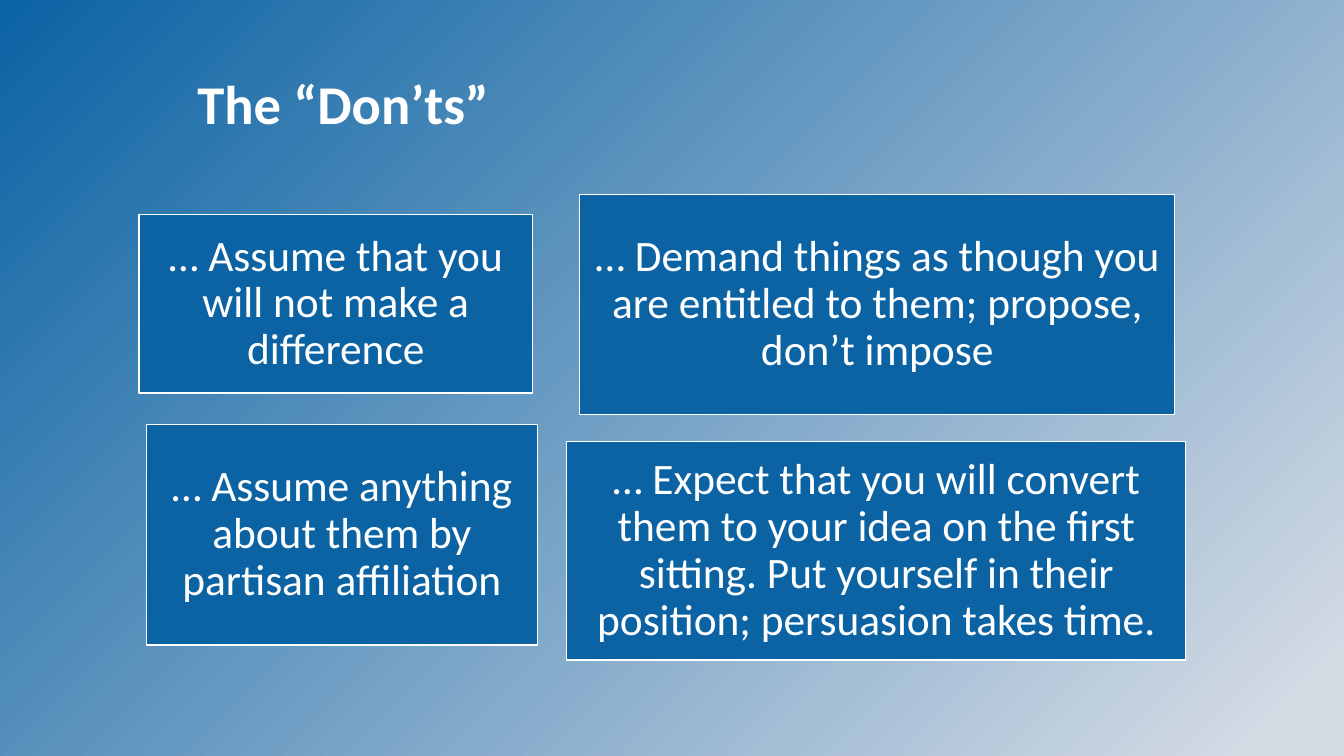
from dataclasses import dataclass

import pptx
import pptx.dml.color
import pptx.enum.shapes
import pptx.enum.text
import pptx.slide
import pptx.text.text
import pptx.util

Inches = pptx.util.Inches
Pt = pptx.util.Pt

BLUE = pptx.dml.color.RGBColor(0x0B, 0x63, 0xA4)
PALE = pptx.dml.color.RGBColor(0xD6, 0xDC, 0xE5)
WHITE = pptx.dml.color.RGBColor(0xFF, 0xFF, 0xFF)
FONT = "Calibri"
CARD_INSET = Inches(0.13)


@dataclass
class Card:
    left: float
    top: float
    width: float
    height: float
    text: str


CARDS = [
    Card(1.38, 2.13, 3.9, 1.77, "… Assume that you will not make a difference"),
    Card(5.75, 1.93, 5.9, 2.18,
         "… Demand things as though you are entitled to them; propose, don’t impose"),
    Card(1.45, 4.21, 3.88, 2.19, "… Assume anything about them by partisan affiliation"),
    Card(5.62, 4.38, 6.14, 2.17,
         "… Expect that you will convert them to your idea on the first sitting. "
         "Put yourself in their position; persuasion takes time."),
]


def paint_background(page: pptx.slide.Slide) -> None:
    fill = page.background.fill
    fill.gradient()
    fill.gradient_angle = 315  # counter-clockwise: runs to the lower right
    for stop, color, position in zip(fill.gradient_stops, (BLUE, PALE), (0, 0.97)):
        stop.color.rgb = color
        stop.position = position


def write_text(frame: pptx.text.text.TextFrame, text: str, size: float,
               bold: bool = False) -> pptx.text.text._Paragraph:
    """Fill the frame with one white paragraph and return it."""
    frame.word_wrap = True
    frame.text = text
    para = frame.paragraphs[0]
    para.line_spacing = 0.9
    font = para.runs[0].font
    font.name = FONT
    font.size = Pt(size)
    font.bold = bold
    font.color.rgb = WHITE
    return para


def add_title(page: pptx.slide.Slide, text: str) -> None:
    box = page.shapes.add_textbox(Inches(1.86), Inches(0.72), Inches(6.06), Inches(0.81))
    write_text(box.text_frame, text, 39, bold=True)


def add_card(page: pptx.slide.Slide, card: Card) -> None:
    box = page.shapes.add_shape(
        pptx.enum.shapes.MSO_SHAPE.RECTANGLE,
        Inches(card.left), Inches(card.top), Inches(card.width), Inches(card.height))
    box.shadow.inherit = False
    box.fill.solid()
    box.fill.fore_color.rgb = BLUE
    box.line.color.rgb = WHITE
    box.line.width = Pt(1)
    frame = box.text_frame
    frame.margin_left = frame.margin_right = CARD_INSET
    frame.margin_top = frame.margin_bottom = CARD_INSET
    frame.vertical_anchor = pptx.enum.text.MSO_ANCHOR.MIDDLE
    para = write_text(frame, card.text, 31)
    para.alignment = pptx.enum.text.PP_ALIGN.CENTER


def main() -> None:
    deck = pptx.Presentation()
    deck.slide_width = Inches(13.33)
    deck.slide_height = Inches(7.5)
    page = deck.slides.add_slide(deck.slide_layouts[6])
    paint_background(page)
    add_title(page, "The “Don’ts”")
    for card in CARDS:
        add_card(page, card)
    deck.save("out.pptx")


if __name__ == "__main__":
    main()
